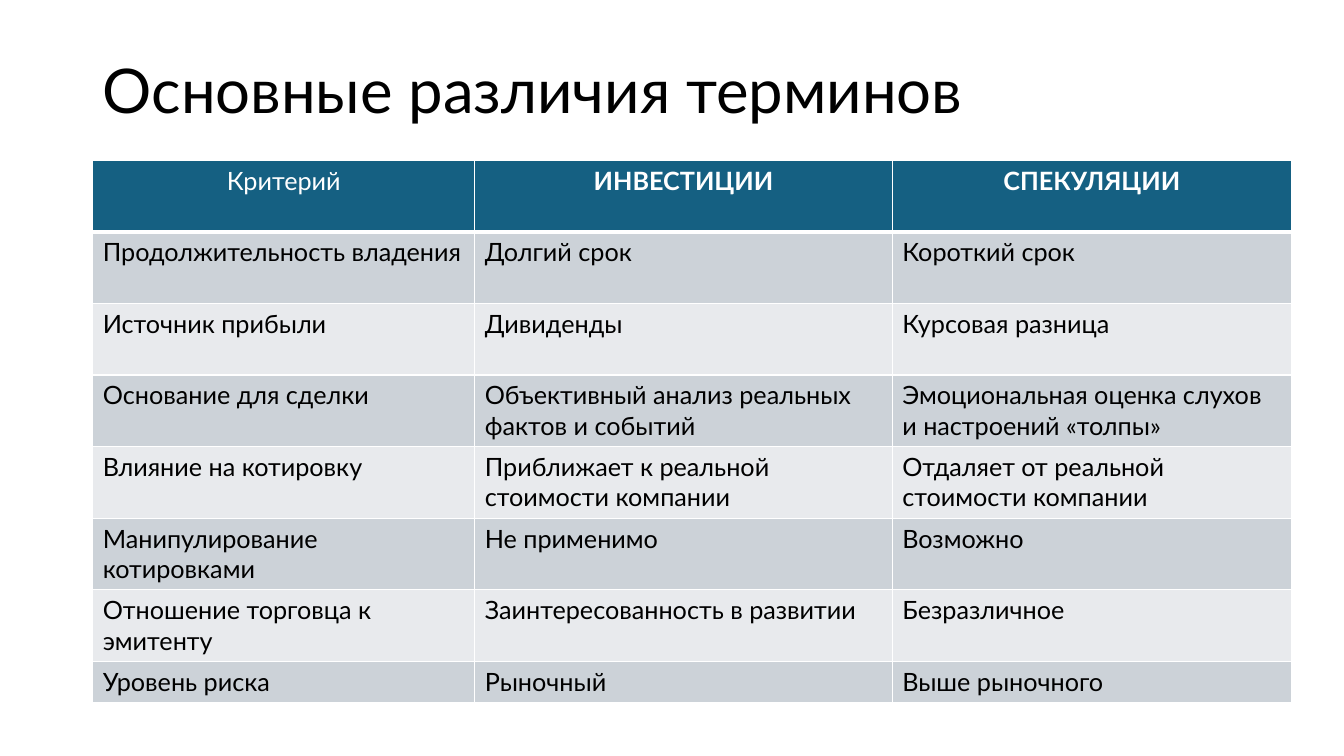
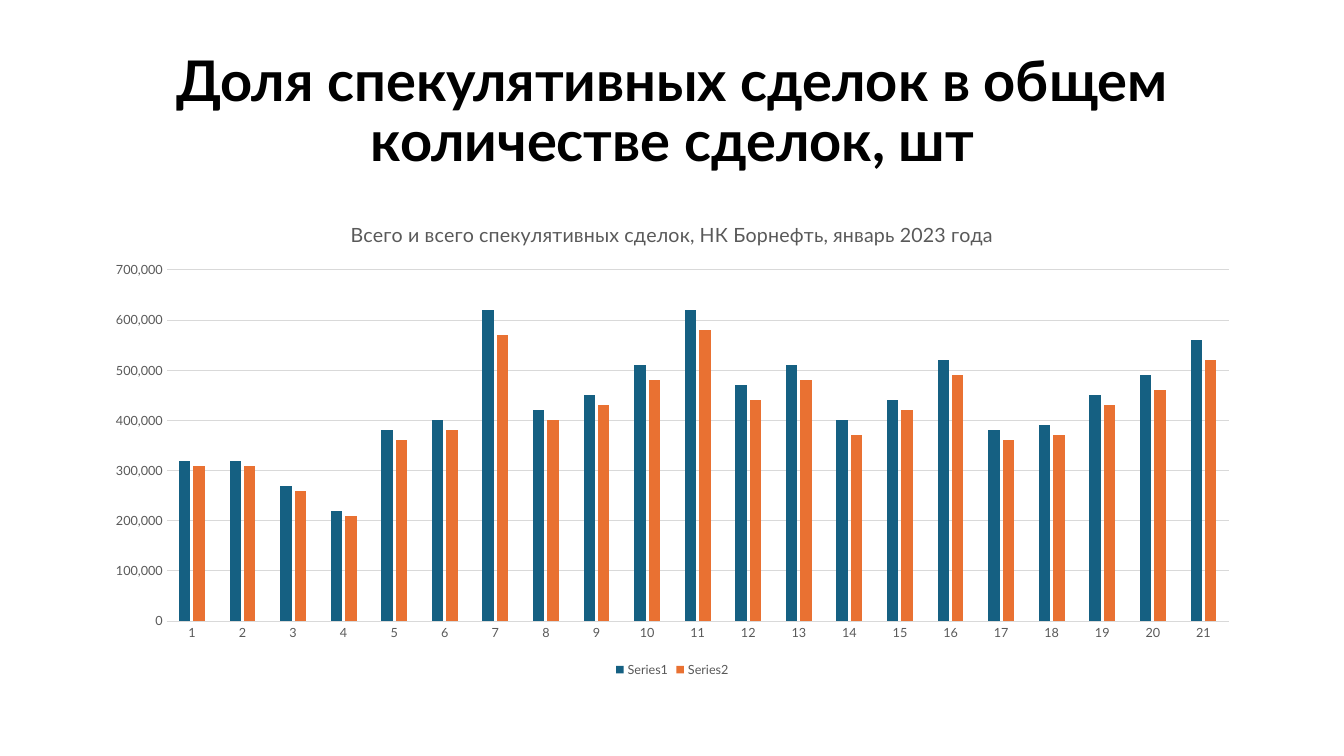
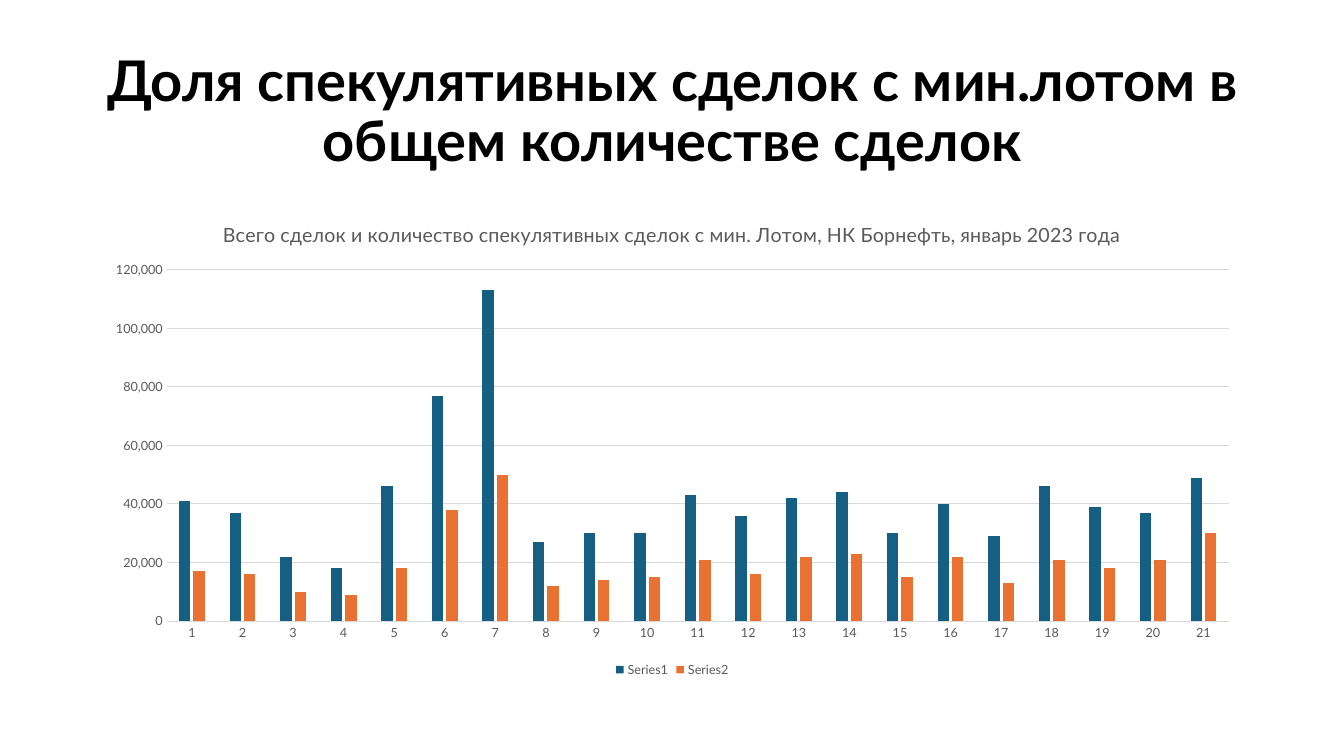
from lxml.etree import SubElement as Sub
from pptx import Presentation
from pptx.chart.data import CategoryChartData as ChartData
from pptx.dml.color import RGBColor as RGB
from pptx.enum.chart import XL_CHART_TYPE as Kind, XL_LEGEND_POSITION as Place, XL_TICK_MARK as Tick
from pptx.enum.text import MSO_ANCHOR as Anchor, MSO_AUTO_SIZE as Fit, PP_ALIGN as Align
from pptx.oxml.ns import qn
from pptx.util import Inches, Pt

FACE = "Lato"
HUES = {"ink": "000000", "paper": "FFFFFF", "blue": "156082", "orange": "E97132",
        "dark": "CCD2D8", "light": "E8EAED", "label": "595959", "grid": "D9D9D9"}

# Slide size, and the shared left edge and width as percent of it
WIDTH, HEIGHT = Inches(13.33), Inches(7.5)
LEFT, SPAN = 6.9, 86.25

# Table: column widths and row heights in percent of the slide
COLS = [28.43, 31.06, 29.71]
ROWS = [9.47] * 7 + [5.47]
TERMS = [
    ("Критерий", "ИНВЕСТИЦИИ", "СПЕКУЛЯЦИИ"),
    ("Продолжительность владения", "Долгий срок", "Короткий срок"),
    ("Источник прибыли", "Дивиденды", "Курсовая разница"),
    ("Основание для сделки", "Объективный анализ реальных фактов и событий",
     "Эмоциональная оценка слухов и настроений «толпы»"),
    ("Влияние на котировку", "Приближает к реальной стоимости компании",
     "Отдаляет от реальной стоимости компании"),
    ("Манипулирование котировками", "Не применимо", "Возможно"),
    ("Отношение торговца к эмитенту", "Заинтересованность в развитии", "Безразличное"),
    ("Уровень риска", "Рыночный", "Выше рыночного"),
]

# Charts: slide title, chart title, all deals and speculative deals in thousands
CHARTS = [
    ("Доля спекулятивных сделок в общем количестве сделок, шт",
     "Всего и всего спекулятивных сделок, НК Борнефть, январь 2023 года",
     [320, 320, 270, 220, 380, 400, 620, 420, 450, 510, 620,
      470, 510, 400, 440, 520, 380, 390, 450, 490, 560],
     [310, 310, 260, 210, 360, 380, 570, 400, 430, 480, 580,
      440, 480, 370, 420, 490, 360, 370, 430, 460, 520]),
    ("Доля спекулятивных сделок с мин.лотом в общем количестве сделок",
     "Всего сделок и количество спекулятивных сделок с мин. Лотом, "
     "НК Борнефть, январь 2023 года",
     [41, 37, 22, 18, 46, 77, 113, 27, 30, 30, 43,
      36, 42, 44, 30, 40, 29, 46, 39, 37, 49],
     [17, 16, 10, 9, 18, 38, 50, 12, 14, 15, 21,
      16, 22, 23, 15, 22, 13, 21, 18, 21, 30]),
]


def wide(share):
    return int(WIDTH * share / 100)


def tall(share):
    return int(HEIGHT * share / 100)


def area(left, top, width, height):
    return wide(left), tall(top), wide(width), tall(height)


def hue(name):
    return RGB.from_string(HUES[name])


def style(font, size, color, bold=False):
    font.name, font.size, font.bold = FACE, Pt(size), bold
    font.color.rgb = hue(color)


def add_slide(deck, text, height, size, bold=False, align=Align.LEFT):
    """Add a slide with its title placed and formatted."""
    slide = deck.slides.add_slide(deck.slide_layouts[5])
    title = slide.shapes.title
    title.left, title.top, title.width, title.height = area(LEFT, 5.33, SPAN, height)
    frame = title.text_frame
    frame.text = text
    frame.auto_size, frame.vertical_anchor = Fit.NONE, Anchor.MIDDLE
    para = frame.paragraphs[0]
    para.alignment, para.line_spacing = align, 0.9
    style(para.font, size, "ink", bold)
    return slide


def add_edges(cell, top, bottom):
    """Draw white cell borders; top and bottom widths are in points."""
    props = cell._tc.get_or_add_tcPr()
    for side, width in (("L", 1), ("R", 1), ("T", top), ("B", bottom)):
        edge = Sub(props, qn("a:ln" + side), w=str(Pt(width)))
        Sub(Sub(edge, qn("a:solidFill")), qn("a:srgbClr"), val=HUES["paper"])


def add_grid(slide, data):
    box = area(LEFT, 21.2, sum(COLS), sum(ROWS))
    table = slide.shapes.add_table(len(data), len(COLS), *box).table
    for col, share in zip(table.columns, COLS):
        col.width = wide(share)
    for r, line in enumerate(data):
        table.rows[r].height = tall(ROWS[r])
        head = r == 0
        fill = "blue" if head else ("light", "dark")[r % 2]
        for c, text in enumerate(line):
            cell = table.cell(r, c)
            add_edges(cell, 3 if r == 1 else 1, 3 if head else 1)
            cell.fill.solid()
            cell.fill.fore_color.rgb = hue(fill)
            cell.text = text
            para = cell.text_frame.paragraphs[0]
            para.alignment = Align.CENTER if head else Align.LEFT
            style(para.font, 18, "paper" if head else "ink", head and c > 0)


def draw(line):
    line.color.rgb, line.width = hue("grid"), Pt(0.75)


def add_bars(slide, name, *sets):
    data = ChartData(number_format="#,##0")
    data.categories = [str(day) for day in range(1, len(sets[0]) + 1)]
    for num, vals in enumerate(sets, 1):
        data.add_series(f"Series{num}", [val * 1000 for val in vals])
    box = area(LEFT, 26.67, SPAN, 63.47)
    chart = slide.shapes.add_chart(Kind.COLUMN_CLUSTERED, *box, data).chart
    style(chart.font, 10, "ink")

    # Title and legend
    chart.has_title = True
    chart.chart_title.include_in_layout = False
    chart.chart_title.text_frame.text = name
    style(chart.chart_title.text_frame.paragraphs[0].font, 14, "label")
    chart.has_legend = True
    chart.legend.position, chart.legend.include_in_layout = Place.BOTTOM, False
    style(chart.legend.font, 9, "label")

    # Axes
    for axis in (chart.category_axis, chart.value_axis):
        axis.major_tick_mark = axis.minor_tick_mark = Tick.NONE
        style(axis.tick_labels.font, 9, "label")
    draw(chart.category_axis.format.line)
    chart.value_axis.format.line.fill.background()
    draw(chart.value_axis.major_gridlines.format.line)

    # Columns
    plot = chart.plots[0]
    plot.gap_width, plot.overlap, plot.vary_by_categories = 219, -27, False
    for bars, color in zip(plot.series, ("blue", "orange")):
        bars.format.fill.solid()
        bars.format.fill.fore_color.rgb = hue(color)


def main():
    deck = Presentation()
    deck.slide_width, deck.slide_height = WIDTH, HEIGHT
    add_grid(add_slide(deck, "Основные различия терминов", 14.13, 44), TERMS)
    for title, name, *sets in CHARTS:
        slide = add_slide(deck, title, 19.33, 40, True, Align.CENTER)
        add_bars(slide, name, *sets)
    deck.save("out.pptx")


if __name__ == "__main__":
    main()
